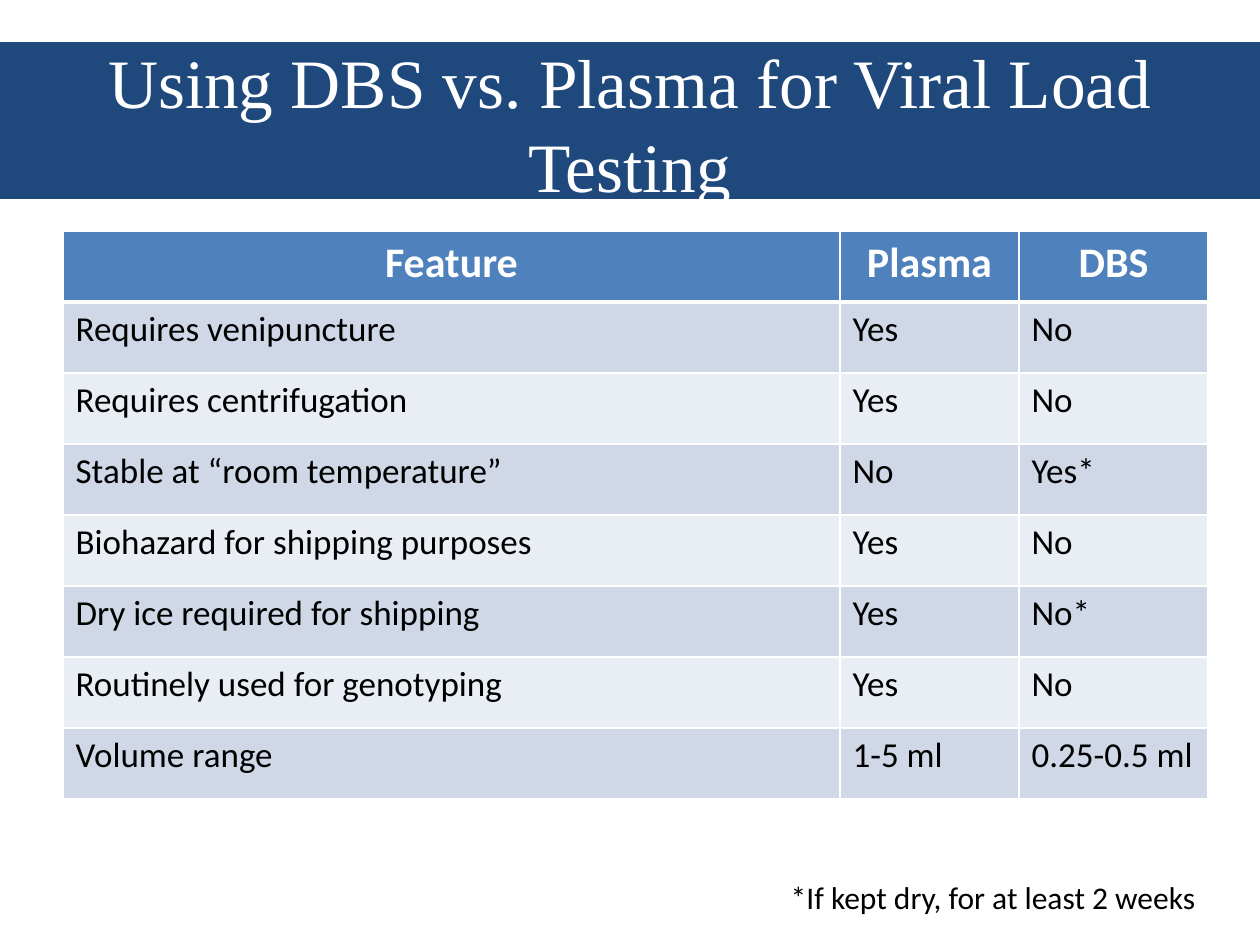
from dataclasses import dataclass

from lxml.etree import SubElement
from pptx import Presentation
from pptx.dml.color import RGBColor
from pptx.enum.shapes import MSO_SHAPE
from pptx.enum.text import MSO_ANCHOR, PP_ALIGN
from pptx.oxml.ns import qn
from pptx.util import Pt

PX = 914400 // 126


@dataclass(frozen=True)
class Theme:
    navy: str = "1F497D"
    header: str = "4F81BD"
    bands: tuple = ("D0D8E8", "E9EDF4")
    white: str = "FFFFFF"
    black: str = "000000"
    title_font: str = "Times New Roman"
    body_font: str = "Calibri"
    title_size: float = 39.6
    header_size: int = 24
    body_size: int = 20
    note_size: int = 18


theme = Theme()


def add_run(paragraph, text, font, size, color, align, bold=False):
    paragraph.alignment = align
    run = paragraph.add_run()
    run.text = text
    run.font.name = font
    run.font.size = Pt(size)
    run.font.bold = bold
    run.font.color.rgb = RGBColor.from_string(color)


def set_borders(cell, bottom_width):
    """Draw white cell borders; call before the fill is set, as the schema orders them."""
    properties = cell._tc.get_or_add_tcPr()
    widths = {"a:lnL": 1, "a:lnR": 1, "a:lnT": 1, "a:lnB": bottom_width}
    for tag, width in widths.items():
        line = SubElement(properties, qn(tag), w=str(Pt(width)))
        fill = SubElement(line, qn("a:solidFill"))
        SubElement(fill, qn("a:srgbClr"), val=theme.white)


presentation = Presentation()
presentation.slide_width = 1260 * PX
presentation.slide_height = 945 * PX
slide = presentation.slides.add_slide(presentation.slide_layouts[6])

# Title band
band = slide.shapes.add_shape(MSO_SHAPE.RECTANGLE, 0, 42 * PX, 1260 * PX, 157 * PX)
band.shadow.inherit = False
band.fill.solid()
band.fill.fore_color.rgb = RGBColor.from_string(theme.navy)
band.line.fill.background()
band.text_frame.word_wrap = True
band.text_frame.vertical_anchor = MSO_ANCHOR.MIDDLE
band.text_frame.margin_top = 9 * PX
title = band.text_frame.paragraphs[0]
title.line_spacing = Pt(48)
add_run(title, "Using DBS vs. Plasma for Viral Load Testing",
        theme.title_font, theme.title_size, theme.white, PP_ALIGN.CENTER)

# Comparison table
rows = [
    ("Feature", "Plasma", "DBS"),
    ("Requires venipuncture", "Yes", "No"),
    ("Requires centrifugation", "Yes", "No"),
    ("Stable at “room temperature”", "No", "Yes*"),
    ("Biohazard for shipping purposes", "Yes", "No"),
    ("Dry ice required for shipping", "Yes", "No*"),
    ("Routinely used for genotyping", "Yes", "No"),
    ("Volume range", "1-5 ml", "0.25-0.5 ml"),
]
column_widths = [777, 179, 189]
row_height = 71
table = slide.shapes.add_table(
    len(rows), len(column_widths), 63 * PX, 231 * PX,
    sum(column_widths) * PX, len(rows) * row_height * PX).table
for column, width in zip(table.columns, column_widths):
    column.width = width * PX

for row_index, texts in enumerate(rows):
    table.rows[row_index].height = row_height * PX
    is_header = row_index == 0
    fill_color = theme.header if is_header else theme.bands[(row_index - 1) % 2]
    for column_index, text in enumerate(texts):
        cell = table.cell(row_index, column_index)
        set_borders(cell, 3 if is_header else 1)
        cell.fill.solid()
        cell.fill.fore_color.rgb = RGBColor.from_string(fill_color)
        add_run(cell.text_frame.paragraphs[0], text, theme.body_font,
                theme.header_size if is_header else theme.body_size,
                theme.white if is_header else theme.black,
                PP_ALIGN.CENTER if is_header else PP_ALIGN.LEFT,
                bold=is_header)

# Footnote
footnote = slide.shapes.add_textbox(757 * PX, 872 * PX, 451 * PX, 50 * PX)
footnote.text_frame.word_wrap = True
add_run(footnote.text_frame.paragraphs[0], "*If kept dry, for at least 2 weeks",
        theme.body_font, theme.note_size, theme.black, PP_ALIGN.RIGHT)

presentation.save("out.pptx")
